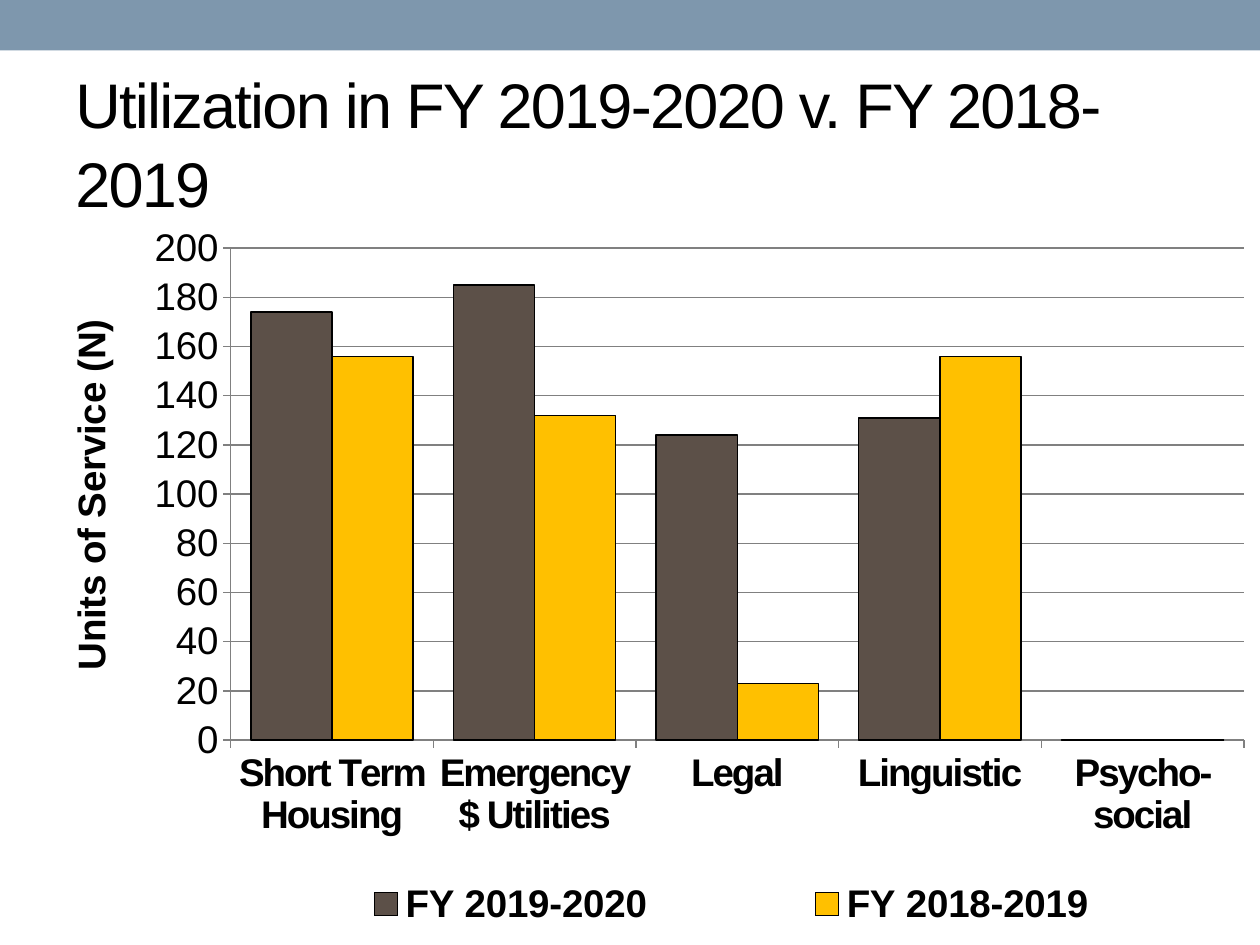
from lxml import etree
from pptx import Presentation
from pptx.chart.data import CategoryChartData
from pptx.dml.color import RGBColor
from pptx.enum import chart as ch, shapes, text
from pptx.oxml import ns
from pptx.util import Inches, Pt

# Content
TITLE = "Utilization in FY 2019-2020 v. FY 2018-2019"
AXIS = "Units of Service (N)"
BLUE = RGBColor(0x7E, 0x97, 0xAD)
BROWN = RGBColor(0x5C, 0x50, 0x48)
GOLD = RGBColor(0xFF, 0xC0, 0x00)
GRAY = RGBColor(0x80, 0x80, 0x80)
BLACK = RGBColor(0, 0, 0)
CATS = ["Short Term Housing", "Emergency $ Utilities", "Legal",
        "Linguistic", "Psycho- social"]
SERIES = [
    ("FY 2019-2020", (174, 185, 124, 131, 0), BROWN),
    ("FY 2018-2019", (156, 132, 23, 156, 0), GOLD),
]


def style(font, size, bold=False):
    font.name, font.size, font.bold = "Arial", Pt(size), bold
    font.color.rgb = BLACK


def place(part, x, y, w=None, h=None, inner=False):
    """Set a manual layout, in shares of the chart's size."""
    node = part.find(ns.qn("c:layout"))
    if node is None:
        node = etree.Element(ns.qn("c:layout"))
        before = [part.find(ns.qn(t)) for t in ("c:tx", "c:legendPos")]
        prev = next((b for b in before if b is not None), None)
        if prev is None:
            part.insert(0, node)
        else:
            prev.addnext(node)
    for old in list(node):
        node.remove(old)
    box = etree.SubElement(node, ns.qn("c:manualLayout"))
    vals = [("layoutTarget", "inner" if inner else None),
            ("xMode", "edge"), ("yMode", "edge"),
            ("x", x), ("y", y), ("w", w), ("h", h)]
    for tag, val in vals:
        if val is not None:
            etree.SubElement(box, ns.qn("c:" + tag)).set("val", str(val))


prs = Presentation()
prs.slide_width, prs.slide_height = Inches(10), Inches(7.5)
slide = prs.slides.add_slide(prs.slide_layouts[6])

# Top band
band = slide.shapes.add_shape(shapes.MSO_SHAPE.RECTANGLE, 0, 0,
                              prs.slide_width, Inches(0.4))
band.shadow.inherit = False
band.fill.solid()
band.fill.fore_color.rgb = BLUE
band.line.fill.background()

# Title
box = slide.shapes.add_textbox(Inches(0.5), Inches(0.58), Inches(9), Inches(1.08))
frame = box.text_frame
frame.word_wrap = True
frame.vertical_anchor = text.MSO_ANCHOR.MIDDLE
frame.text = TITLE
para = frame.paragraphs[0]
para.line_spacing = 1.05
run = para.runs[0]
style(run.font, 36)
run.font._element.set("spc", "-100")

# Chart
data = CategoryChartData(number_format="#,##0")
data.categories = CATS
for name, vals, _ in SERIES:
    data.add_series(name, vals)
chart = slide.shapes.add_chart(
    ch.XL_CHART_TYPE.COLUMN_CLUSTERED, Inches(0.28), Inches(1.8),
    Inches(9.69), Inches(5.66), data).chart
chart.has_title = False
style(chart.font, 22)

# Bars
plot = chart.plots[0]
plot.gap_width, plot.overlap = 50, 0
plot.vary_by_categories = False
for ser, (_, _, color) in zip(plot.series, SERIES):
    ser.format.fill.solid()
    ser.format.fill.fore_color.rgb = color
    ser.format.line.color.rgb = BLACK
    ser.format.line.width = Pt(0.75)

# Axes
cat, val = chart.category_axis, chart.value_axis
for axis, bold in ((cat, True), (val, False)):
    style(axis.tick_labels.font, 22, bold)
    axis.major_tick_mark = ch.XL_TICK_MARK.OUTSIDE
    axis.format.line.color.rgb = GRAY
cat.tick_labels.font._element.set("spc", "-100")
val.minimum_scale, val.maximum_scale, val.major_unit = 0, 200, 20
val.tick_labels.number_format = "#,##0"
val.tick_labels.number_format_is_linked = False
val.has_major_gridlines = True
val.major_gridlines.format.line.color.rgb = GRAY
head = val.axis_title
head.text_frame.text = AXIS
style(head.text_frame.paragraphs[0].runs[0].font, 22, True)
head.text_frame._txBody.bodyPr.set("rot", "-5400000")
head.text_frame._txBody.bodyPr.set("vert", "horz")

# Legend
chart.has_legend = True
key = chart.legend
key.position = ch.XL_LEGEND_POSITION.BOTTOM
key.include_in_layout = False
style(key.font, 22, True)

# Layout within the chart
area = chart._chartSpace.chart.plotArea
place(area, 0.16, 0.03, 0.83, 0.69, inner=True)
place(head._element, 0.02, 0.12)
place(key._element, 0.15, 0.91, 0.84, 0.08)

prs.save("out.pptx")
